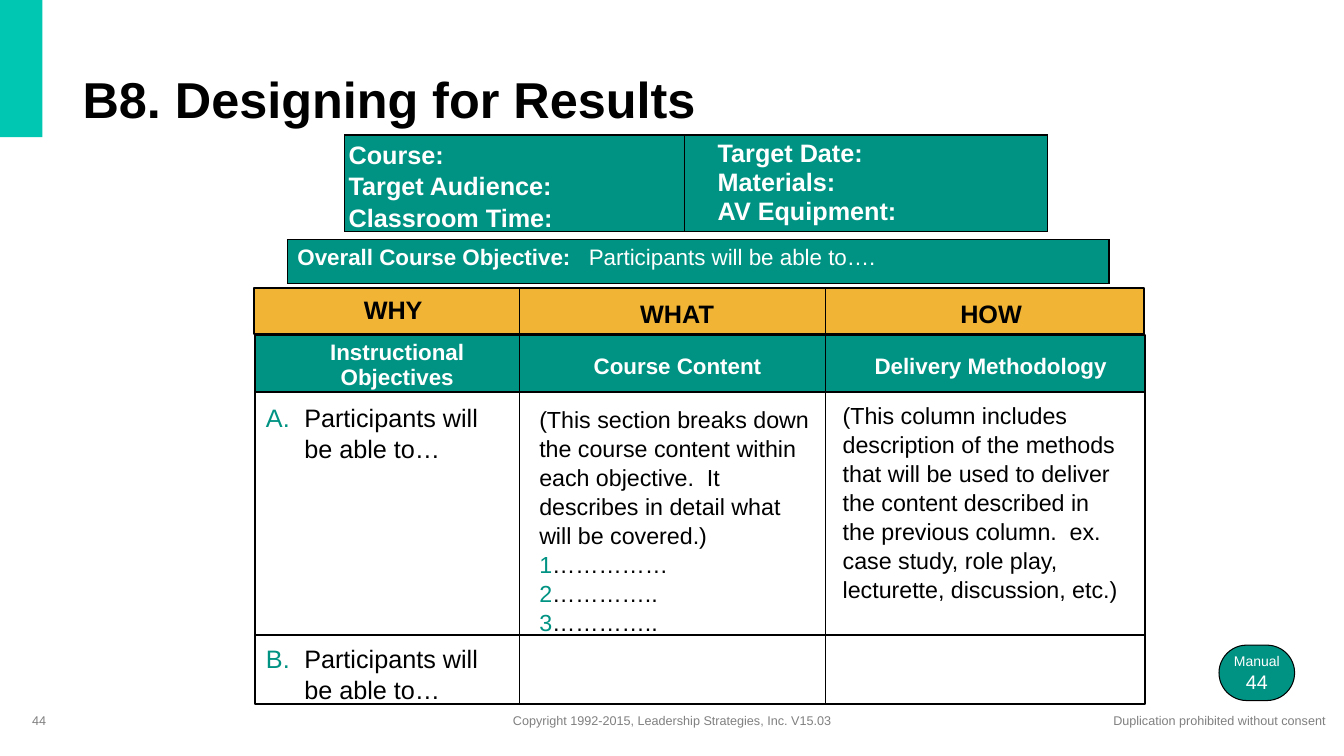
from dataclasses import dataclass

from lxml.etree import SubElement
from pptx import Presentation
from pptx.dml.color import RGBColor
from pptx.enum.shapes import MSO_CONNECTOR, MSO_SHAPE
from pptx.enum.text import MSO_ANCHOR, PP_ALIGN
from pptx.oxml.ns import qn
from pptx.util import Inches, Pt


@dataclass(frozen=True)
class Theme:
    font: str = "Arial"
    black: str = "000000"
    white: str = "FFFFFF"
    grey: str = "808080"
    aqua: str = "00C7B1"
    teal: str = "009383"
    amber: str = "F1B434"
    title: float = 36
    heading: float = 18
    body: float = 16.6
    label: float = 16
    page: float = 14
    badge: float = 10
    footer: float = 9


THEME = Theme()
LEFT, CENTER = PP_ALIGN.LEFT, PP_ALIGN.CENTER
BODY_SPACING = 1.04

GRID_LEFT, GRID_WIDTH = 2.52, 8.83
GRID_TOP, GRID_BOTTOM = 2.86, 6.97
COLUMN_EDGES = (5.15, 8.19)
OBJECTIVE_EDGE = 6.3


def rgb(color):
    return RGBColor.from_string(color)


def style(paragraph, size, color=THEME.black, bold=False, align=LEFT, spacing=None):
    paragraph.alignment = align
    paragraph.line_spacing = spacing
    font = paragraph.font
    font.name, font.size, font.bold = THEME.font, Pt(size), bold
    font.color.rgb = rgb(color)


def add_text(slide, box, lines, size, anchor=MSO_ANCHOR.TOP, wrap=True, **look):
    """Add a text box with one paragraph per line and return its paragraphs."""
    frame = slide.shapes.add_textbox(*map(Inches, box)).text_frame
    frame.word_wrap = wrap
    frame.vertical_anchor = anchor
    frame.text = "\n".join(lines)
    for paragraph in frame.paragraphs:
        style(paragraph, size, **look)
    return frame.paragraphs


def add_panel(slide, box, fill=None, border=None, preset=MSO_SHAPE.RECTANGLE):
    panel = slide.shapes.add_shape(preset, *map(Inches, box))
    panel.shadow.inherit = False
    if fill:
        panel.fill.solid()
        panel.fill.fore_color.rgb = rgb(fill)
    else:
        panel.fill.background()
    if border:
        panel.line.color.rgb = rgb(THEME.black)
        panel.line.width = Pt(border)
    else:
        panel.line.fill.background()
    return panel


def add_rule(slide, x1, y1, x2, y2):
    rule = slide.shapes.add_connector(
        MSO_CONNECTOR.STRAIGHT, *map(Inches, (x1, y1, x2, y2)))
    rule.line.color.rgb = rgb(THEME.black)
    rule.line.width = Pt(1)
    SubElement(rule.element.spPr, qn("a:effectLst"))


def add_band(slide, left, top, height, widths):
    """Add a one-row teal table with thin black borders and return its cells."""
    table = slide.shapes.add_table(
        1, len(widths), *map(Inches, (left, top, sum(widths), height))).table
    for column, width in zip(table.columns, widths):
        column.width = Inches(width)
    cells = list(table.iter_cells())
    for cell in cells:
        properties = cell._tc.get_or_add_tcPr()
        for side in ("lnL", "lnR", "lnT", "lnB"):
            border = SubElement(properties, qn(f"a:{side}"), w=str(Pt(1)))
            ink = SubElement(border, qn("a:solidFill"))
            SubElement(ink, qn("a:srgbClr"), val=THEME.black)
        cell.fill.solid()
        cell.fill.fore_color.rgb = rgb(THEME.teal)
    return cells


def add_tab(paragraph, position):
    tabs = SubElement(paragraph._p.get_or_add_pPr(), qn("a:tabLst"))
    SubElement(tabs, qn("a:tab"), pos=str(Inches(position)), algn="l")


def add_objective(slide, top, height, number):
    """Add an objective lettered A, B, ... by its number."""
    frame = slide.shapes.add_textbox(
        *map(Inches, (2.54, top, 2.57, height))).text_frame
    frame.word_wrap = True
    frame.text = "Participants will be able to…"
    objective = frame.paragraphs[0]
    properties = objective._p.get_or_add_pPr()
    properties.set("marL", str(Inches(0.38)))
    properties.set("indent", str(-Inches(0.38)))
    bullet_color = SubElement(properties, qn("a:buClr"))
    SubElement(bullet_color, qn("a:srgbClr"), val=THEME.teal)
    SubElement(properties, qn("a:buFont"), typeface=THEME.font)
    SubElement(properties, qn("a:buAutoNum"),
               type="alphaUcPeriod", startAt=str(number))
    style(objective, THEME.heading, spacing=BODY_SPACING)


def add_course_details(slide):
    add_band(slide, 3.42, 1.34, 0.96, (3.37, 3.6))
    look = dict(size=THEME.heading, color=THEME.white, bold=True)
    add_text(slide, (3.36, 1.32, 4.31, 1.0),
             ["Course:", "Target Audience:", "Classroom Time:"],
             spacing=BODY_SPACING, **look)
    add_text(slide, (7.02, 1.34, 4.31, 1.0),
             ["Target Date:", "Materials:", "AV Equipment:"],
             spacing=0.95, **look)


def add_course_objective(slide):
    cell, = add_band(slide, 2.85, 2.38, 0.43, (8.15,))
    paragraph = cell.text_frame.paragraphs[0]
    add_tab(paragraph, 2.89)
    style(paragraph, THEME.label, THEME.white)
    heading = paragraph.add_run()
    heading.text = "Overall Course Objective:\t"
    heading.font.bold = True
    paragraph.add_run().text = "Participants will be able to…."


def add_grid(slide):
    right = GRID_LEFT + GRID_WIDTH
    for left, top, height, fill in ((2.52, 2.86, 0.45, THEME.amber),
                                    (2.53, 3.32, 0.57, THEME.teal),
                                    (2.53, 3.89, 3.09, None)):
        add_panel(slide, (left, top, GRID_WIDTH, height), fill, border=1.5)
    add_rule(slide, GRID_LEFT, OBJECTIVE_EDGE, right, OBJECTIVE_EDGE)
    for edge in COLUMN_EDGES:
        add_rule(slide, edge, GRID_TOP, edge, GRID_BOTTOM)

    for question, left, top, width in (("WHY", 3.48, 2.86, 0.84),
                                       ("WHAT", 6.19, 2.9, 1.05),
                                       ("HOW", 9.41, 2.9, 0.84)):
        add_text(slide, (left, top, width, 0.45), [question], THEME.heading,
                 bold=True, align=CENTER, spacing=BODY_SPACING)
    for heading, box, spacing in (
            ("Instructional Objectives", (3.04, 3.32, 1.8, 0.6), Pt(18)),
            ("Course Content", (5.67, 3.43, 2.1, 0.45), BODY_SPACING),
            ("Delivery Methodology", (8.28, 3.43, 3.09, 0.45), BODY_SPACING)):
        add_text(slide, box, [heading], THEME.label, color=THEME.white,
                 bold=True, align=CENTER, spacing=spacing)

    for number, (top, height) in enumerate(((3.93, 1.11), (6.32, 0.65)), 1):
        add_objective(slide, top, height, number)
    content = add_text(
        slide, (5.25, 3.96, 2.88, 2.35),
        ["(This section breaks down the course content within each objective.  "
         "It describes in detail what will be covered.)", "", "", ""],
        THEME.body, spacing=BODY_SPACING)
    for topic, (number, dots) in zip(
            content[1:], (("1", "……………"), ("2", "………….."), ("3", "………….."))):
        marker = topic.add_run()
        marker.text = number
        marker.font.color.rgb = rgb(THEME.teal)
        topic.add_run().text = dots
    add_text(slide, (8.26, 3.92, 2.93, 2.46),
             ["(This column includes description of the methods that will be used "
              "to deliver the content described in the previous column.  ex. case "
              "study, role play, lecturette, discussion, etc.)"],
             THEME.body, spacing=BODY_SPACING)


def add_manual_badge(slide):
    badge = add_panel(slide, (12.09, 6.4, 0.75, 0.55), THEME.teal, 0.75,
                      MSO_SHAPE.ROUNDED_RECTANGLE)
    badge.adjustments[0] = 0.5
    frame = badge.text_frame
    frame.word_wrap = False
    frame.vertical_anchor = MSO_ANCHOR.MIDDLE
    frame.text = "Manual\n44"
    for paragraph, size in zip(frame.paragraphs, (THEME.badge, THEME.page)):
        style(paragraph, size, THEME.white, align=CENTER)


def add_footer(slide):
    add_text(slide, (0.22, 6.95, 3, 0.4), ["44"], THEME.footer,
             anchor=MSO_ANCHOR.MIDDLE, color=THEME.grey)
    for notice, left, width in (
            ("Copyright 1992-2015, Leadership Strategies, Inc. V15.03", 4.97, 3.39),
            ("Duplication prohibited without consent", 10.93, 2.33)):
        add_text(slide, (left, 7.02, width, 0.25), [notice], THEME.footer,
                 wrap=False, color=THEME.grey, align=CENTER)


def main():
    deck = Presentation()
    deck.slide_width, deck.slide_height = Inches(13.33), Inches(7.5)
    slide = deck.slides.add_slide(deck.slide_layouts[6])
    add_panel(slide, (-0.02, -0.02, 0.44, 1.38), THEME.aqua)
    add_text(slide, (0.72, 0.57, 8.12, 0.76), ["B8. Designing for Results"],
             THEME.title, anchor=MSO_ANCHOR.BOTTOM, bold=True, spacing=0.9)
    add_course_details(slide)
    add_course_objective(slide)
    add_grid(slide)
    add_manual_badge(slide)
    add_footer(slide)
    deck.save("out.pptx")


if __name__ == "__main__":
    main()
